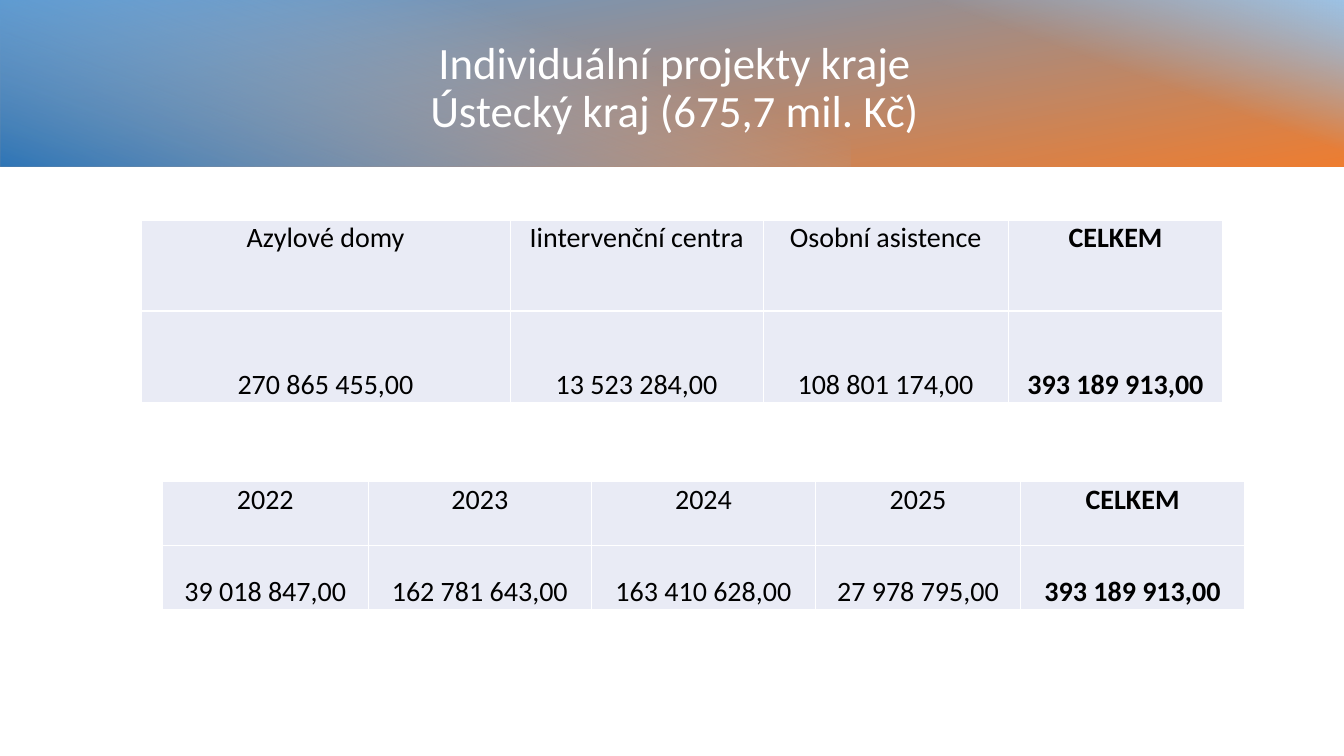
import pptx
import pptx.dml.color
import pptx.enum.shapes
import pptx.enum.text
import pptx.oxml
import pptx.oxml.ns
import pptx.util

COLORS = {
    "blue": "5B9BD5", "orange": "ED7D31", "light blue": "9DC3E6", "dark blue": "2E75B6",
    "white": "FFFFFF", "black": "000000", "cell": "E9EBF5",
}
WIDTH, HEIGHT = pptx.util.Inches(13.33), pptx.util.Inches(7.5)
BAND_HEIGHT = 0.22
SERVICES = [
    ["Azylové domy", "Iintervenční centra", "Osobní asistence", "CELKEM"],
    ["270 865 455,00", "13 523 284,00", "108 801 174,00", "393 189 913,00"],
]
YEARS = [
    ["2022", "2023", "2024", "2025", "CELKEM"],
    ["39 018 847,00", "162 781 643,00", "163 410 628,00", "27 978 795,00", "393 189 913,00"],
]


def rgb(name):
    """Return the named colour."""
    return pptx.dml.color.RGBColor.from_string(COLORS[name])


def scale(box):
    """Turn shares of the slide's size into lengths."""
    left, top, width, height = box
    return int(left * WIDTH), int(top * HEIGHT), int(width * WIDTH), int(height * HEIGHT)


def add_gradient(group, box, rotation, angle, stops, fades_in):
    """Add a turned rectangle that covers the box with a two-colour gradient."""
    left, top, width, height = scale(box)
    shift = (width - height) // 2
    shape = group.shapes.add_shape(
        pptx.enum.shapes.MSO_SHAPE.RECTANGLE, left + shift, top - shift, height, width)
    shape.rotation = rotation
    shape.shadow.inherit = False
    shape.line.fill.background()
    shape.fill.gradient()
    shape.fill.gradient_angle = 360 - angle
    for stop, (position, color) in zip(shape.fill.gradient_stops, stops):
        stop.position = position
        stop.color.rgb = rgb(color)
    if fades_in:
        first_color = next(shape.element.iter(pptx.oxml.ns.qn("a:gs")))[0]
        first_color.append(pptx.oxml.parse_xml(
            f'<a:alpha {pptx.oxml.ns.nsdecls("a")} val="0"/>'))


def add_band(slide, box):
    """Lay the three gradients of the title band over one another."""
    left, top, width, height = box
    group = slide.shapes.add_group_shape()
    add_gradient(group, box, 270, 170, [(0, "blue"), (1, "orange")], False)
    corner = 0.415 * width
    add_gradient(group, (left + width - corner, top, corner, height), 270, 20,
                 [(0.59, "light blue"), (1, "light blue")], True)
    add_gradient(group, (left, top, 0.633 * width, height), 90, 20,
                 [(0.29, "light blue"), (1, "dark blue")], True)


def add_title(slide, box, text):
    """Place the title in front of the band."""
    title = slide.shapes.title
    title.left, title.top, title.width, title.height = scale(box)
    slide.shapes.element.append(title.element)
    frame = title.text_frame
    frame.text = text
    frame.word_wrap = True
    frame.auto_size = pptx.enum.text.MSO_AUTO_SIZE.NONE
    frame.vertical_anchor = pptx.enum.text.MSO_ANCHOR.MIDDLE
    para = frame.paragraphs[0]
    para.line_spacing = 0.9
    format_paragraph(para, 32, "white")


def format_paragraph(para, size, color):
    """Centre a paragraph and set its font."""
    para.alignment = pptx.enum.text.PP_ALIGN.CENTER
    para.font.name = "Calibri"
    para.font.size = pptx.util.Pt(size)
    para.font.color.rgb = rgb(color)


def format_cell(cell, anchor, bold):
    """Set borders, fill, margins and font of a table cell."""
    properties = cell._tc.get_or_add_tcPr()
    for side in "LRTB":
        properties.append(pptx.oxml.parse_xml(
            f'<a:ln{side} {pptx.oxml.ns.nsdecls("a")} w="12700"><a:solidFill>'
            f'<a:srgbClr val="{COLORS["white"]}"/></a:solidFill></a:ln{side}>'))
    cell.fill.solid()
    cell.fill.fore_color.rgb = rgb("cell")
    cell.margin_left = cell.margin_right = cell.margin_top = pptx.util.Inches(0.01)
    cell.margin_bottom = 0
    cell.vertical_anchor = anchor
    para = cell.text_frame.paragraphs[0]
    format_paragraph(para, 20, "black")
    para.font.bold = bold


def add_amounts(slide, box, rows, column_widths):
    """Add a table of headings over amounts, with the total in bold."""
    left, top, width, height = scale(box)
    table = slide.shapes.add_table(
        len(rows), len(column_widths), left, top, width, height).table
    table.first_row = table.horz_banding = False
    for column, share in zip(table.columns, column_widths):
        column.width = int(width * share / sum(column_widths))
    anchors = [pptx.enum.text.MSO_ANCHOR.TOP, pptx.enum.text.MSO_ANCHOR.BOTTOM]
    for row_index, (texts, anchor) in enumerate(zip(rows, anchors)):
        for column_index, text in enumerate(texts):
            cell = table.cell(row_index, column_index)
            cell.text = text
            format_cell(cell, anchor, column_index == len(texts) - 1)


def main():
    """Build the slide and save the deck."""
    deck = pptx.Presentation()
    deck.slide_width, deck.slide_height = WIDTH, HEIGHT
    slide = deck.slides.add_slide(deck.slide_layouts[5])
    add_band(slide, (0, 0, 1, BAND_HEIGHT))
    add_title(slide, (0.072, 0.044, 0.86, 0.147),
              "Individuální projekty kraje\vÚstecký kraj (675,7 mil. Kč)")
    add_amounts(slide, (0.105, 0.291, 0.805, 0.241), SERVICES, [3.66, 2.51, 2.43, 2.13])
    add_amounts(slide, (0.121, 0.637, 0.805, 0.169), YEARS, [2.04, 2.22, 2.22, 2.04, 2.22])
    deck.save("out.pptx")


if __name__ == "__main__":
    main()
